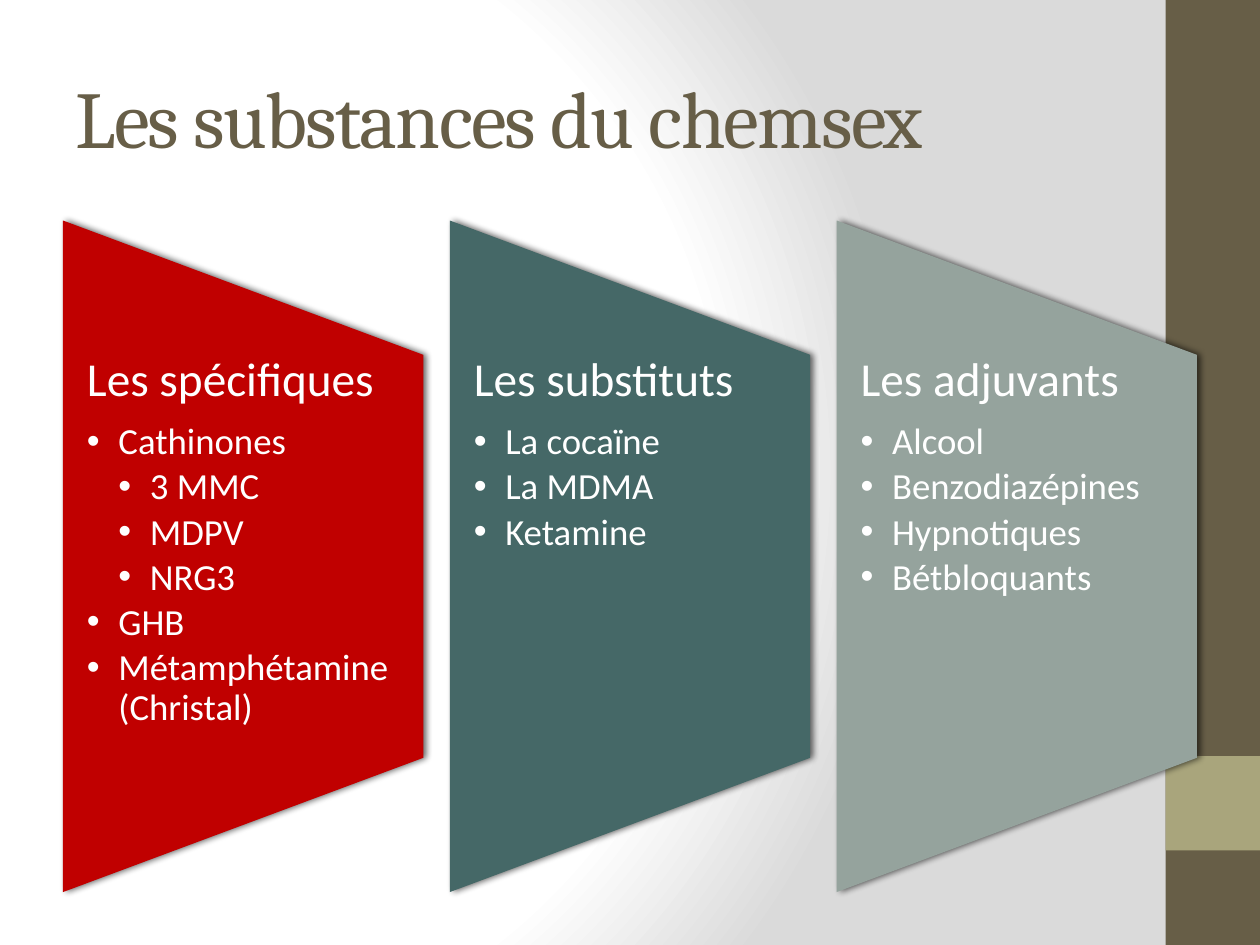
from dataclasses import dataclass

from lxml.etree import SubElement
from pptx import Presentation
from pptx.dml.color import RGBColor
from pptx.enum.shapes import MSO_SHAPE as Shape
from pptx.enum.text import MSO_ANCHOR as Anchor, MSO_AUTO_SIZE as AutoSize, PP_ALIGN as Align
from pptx.oxml.ns import qn
from pptx.util import Inches, Pt

COLUMNS, ROWS = 40, 30
COMPARISON_LAYOUT = 4


@dataclass(frozen=True)
class Theme:
    olive: str = "675E47"
    sand: str = "A9A57C"
    red: str = "C00000"
    teal: str = "456867"
    sage: str = "95A39D"
    white: str = "FFFFFF"
    mist: str = "DADADA"
    black: str = "000000"
    title_font: str = "Cambria"
    body_font: str = "Calibri"
    title_size: int = 46
    heading_size: int = 27
    item_size: int = 21


THEME = Theme()

# Each panel: heading, colour, items as (level, wording)
PANELS = [
    ("Les spécifiques", THEME.red, [
        (1, "Cathinones"), (2, "3 MMC"), (2, "MDPV"), (2, "NRG3"),
        (1, "GHB"), (1, "Métamphétamine (Christal)")]),
    ("Les substituts", THEME.teal, [
        (1, "La cocaïne"), (1, "La MDMA"), (1, "Ketamine")]),
    ("Les adjuvants", THEME.sage, [
        (1, "Alcool"), (1, "Benzodiazépines"), (1, "Hypnotiques"), (1, "Bétbloquants")]),
]


def add_node(parent, tag, **attributes):
    return SubElement(parent, qn(tag), {name: str(value) for name, value in attributes.items()})


class SlideBuilder:
    def __init__(self, deck, theme):
        self.theme = theme
        self.column = deck.slide_width / COLUMNS
        self.row = deck.slide_height / ROWS
        self.slide = deck.slides.add_slide(deck.slide_layouts[COMPARISON_LAYOUT])
        self.title_holder, *self.list_holders = self.slide.placeholders

    def box(self, left, top, width, height):
        """Turn grid columns and rows into slide lengths."""
        return (round(left * self.column), round(top * self.row),
                round(width * self.column), round(height * self.row))

    def place(self, holder, left, top, width, height):
        holder.left, holder.top, holder.width, holder.height = self.box(left, top, width, height)
        holder.text_frame.word_wrap = True
        holder.text_frame.auto_size = AutoSize.NONE

    def background(self):
        fill = self.slide.background.fill
        fill.gradient()
        gradient = self.slide.background._cSld.find(".//" + qn("a:gradFill"))
        for child in list(gradient):
            gradient.remove(child)
        stops = add_node(gradient, "a:gsLst")
        for share, colour in ((0, self.theme.white), (75, self.theme.white), (100, self.theme.mist)):
            add_node(add_node(stops, "a:gs", pos=share * 1000), "a:srgbClr", val=colour)
        circle = add_node(gradient, "a:path", path="circle")
        add_node(circle, "a:fillToRect", l=20000, t=50000, r=100000, b=50000)

    def block(self, kind, bounds, colour):
        block = self.slide.shapes.add_shape(kind, *self.box(*bounds))
        block.shadow.inherit = False
        block.fill.solid()
        block.fill.fore_color.rgb = RGBColor.from_string(colour)
        block.line.fill.background()
        return block

    def trapezoid(self, left, top, width, height, colour):
        """Draw a panel narrowing to the right: a preset turned by 270 degrees."""
        # Columns and rows are equally long, so the sides swap about the centre.
        shift = (height - width) / 2
        panel = self.block(Shape.FLOWCHART_MANUAL_OPERATION,
                           (left - shift, top + shift, height, width), colour)
        panel.rotation = 270
        effects = panel._element.spPr.find(qn("a:effectLst"))
        shadow = add_node(effects, "a:outerShdw", blurRad=Pt(4), dist=Pt(2), dir=0)
        add_node(add_node(shadow, "a:srgbClr", val=self.theme.black), "a:alpha", val=60000)

    def run(self, paragraph, wording, font, size, colour):
        run = paragraph.add_run()
        run.text = wording
        run.font.name, run.font.size, run.font.bold = font, Pt(size), False
        run.font.color.rgb = RGBColor.from_string(colour)
        return run

    def title(self, wording, bounds):
        self.place(self.title_holder, *bounds)
        frame = self.title_holder.text_frame
        frame.vertical_anchor = Anchor.MIDDLE
        paragraph = frame.paragraphs[0]
        paragraph.alignment = Align.LEFT
        run = self.run(paragraph, wording, self.theme.title_font,
                       self.theme.title_size, self.theme.olive)
        run.font._element.set("spc", "-100")

    def line(self, paragraph, level, wording):
        size, gap = ((self.theme.item_size, 0.15) if level
                     else (self.theme.heading_size, 0.35))
        paragraph.level = level
        paragraph.alignment = Align.LEFT
        paragraph.line_spacing = 0.9
        paragraph.space_before, paragraph.space_after = Pt(0), Pt(size * gap)
        properties = paragraph._p.get_or_add_pPr()
        properties.set("marL", str(Inches(0.25 * level)))
        properties.set("indent", str(Inches(-0.25 if level else 0)))
        if level:
            add_node(properties, "a:buFont", typeface="Arial")
            add_node(properties, "a:buChar", char="•")
        else:
            add_node(properties, "a:buNone")
        self.run(paragraph, wording, self.theme.body_font, size, self.theme.white)

    def bullets(self, heading, items, bounds):
        holder = self.list_holders.pop(0)
        self.place(holder, *bounds)
        self.slide.shapes._spTree.append(holder._element)  # in front of its panel
        frame = holder.text_frame
        frame.vertical_anchor = Anchor.TOP
        frame.margin_left = frame.margin_right = Inches(0.19)
        frame.margin_top = frame.margin_bottom = 0
        self.line(frame.paragraphs[0], 0, heading)
        for level, wording in items:
            self.line(frame.add_paragraph(), level, wording)

    def drop_unused(self):
        for holder in self.list_holders:
            holder._element.getparent().remove(holder._element)


def main():
    deck = Presentation()
    deck.slide_width, deck.slide_height = Inches(10), Inches(7.5)
    page = SlideBuilder(deck, THEME)
    page.background()
    page.block(Shape.RECTANGLE, (37, 0, 3, ROWS), THEME.olive)
    page.block(Shape.RECTANGLE, (37, 24, 3, 3), THEME.sand)
    page.title("Les substances du chemsex", (2, 1.2, 33.32, 5))

    width, pitch = 11.44, 12.28
    for index, (heading, colour, items) in enumerate(PANELS):
        left = 2 + index * pitch
        page.trapezoid(left, 7, width, 21.32, colour)
        page.bullets(heading, items, (left, 11.28, width, 12.8))
    page.drop_unused()
    deck.save("out.pptx")


if __name__ == "__main__":
    main()
